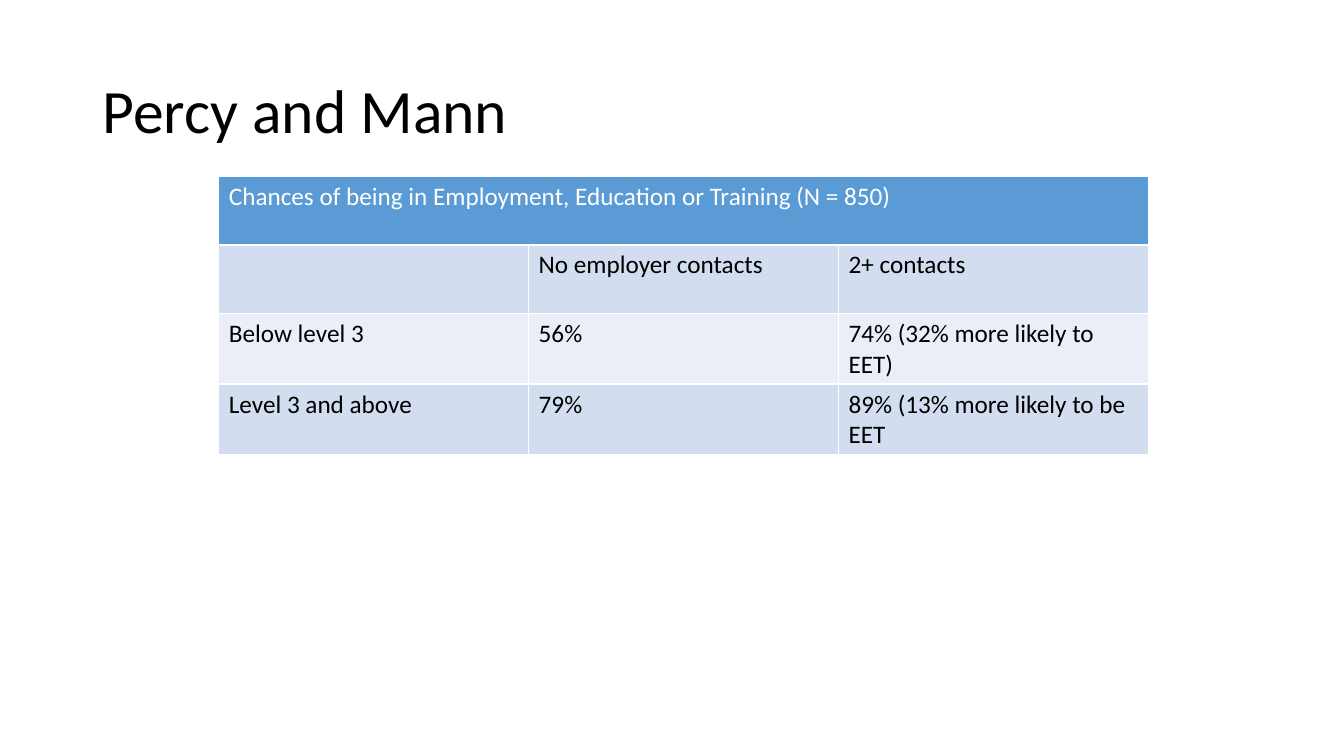
from dataclasses import dataclass

from lxml import etree
from pptx import Presentation
from pptx.dml.color import RGBColor
from pptx.enum import text
from pptx.oxml import ns
from pptx.util import Inches, Pt


@dataclass(frozen=True)
class Theme:
    font: str = "Calibri"
    title_size: int = 44
    table_size: int = 18
    dark: str = "000000"
    light: str = "FFFFFF"
    header: str = "5B9BD5"
    bands: tuple = ("D2DEEF", "EAEFF7")
    border_width: int = 1


THEME = Theme()
HEADING = "Chances of being in Employment, Education or Training (N = 850)"
ROWS = [
    (HEADING, "", ""),
    ("", "No employer contacts", "2+ contacts"),
    ("Below level 3", "56%", "74% (32% more likely to EET)"),
    ("Level 3 and above", "79%", "89% (13% more likely to be EET"),
]


def style_font(paragraph, size, color):
    paragraph.font.name = THEME.font
    paragraph.font.size = Pt(size)
    paragraph.font.bold = False
    paragraph.font.color.rgb = RGBColor.from_string(color)


def add_title(slide, wording):
    frame = slide.shapes.add_textbox(
        Inches(0.92), Inches(0.4), Inches(11.5), Inches(1.45)).text_frame
    frame.word_wrap = True
    frame.vertical_anchor = text.MSO_ANCHOR.MIDDLE
    title = frame.paragraphs[0]
    title.text = wording
    title.line_spacing = 0.9
    style_font(title, THEME.title_size, THEME.dark)


def add_borders(cell):
    """Draw all four sides; lines must precede the fill in the cell properties."""
    properties = cell._tc.get_or_add_tcPr()
    for position, side in enumerate(("lnL", "lnR", "lnT", "lnB")):
        line = etree.Element(ns.qn(f"a:{side}"), w=str(Pt(THEME.border_width)))
        fill = etree.SubElement(line, ns.qn("a:solidFill"))
        etree.SubElement(fill, ns.qn("a:srgbClr"), val=THEME.light)
        properties.insert(position, line)


def style_cell(cell, wording, fill, color):
    cell.text = wording
    style_font(cell.text_frame.paragraphs[0], THEME.table_size, color)
    cell.fill.solid()
    cell.fill.fore_color.rgb = RGBColor.from_string(fill)
    add_borders(cell)


def add_chances_table(slide, rows):
    row_count, column_count = len(rows), len(rows[0])
    table = slide.shapes.add_table(
        row_count, column_count, Inches(2.17), Inches(1.75),
        Inches(9.22), Inches(0.68 * row_count)).table
    table.first_row = table.horz_banding = False
    for row_index, row in enumerate(rows):
        if row_index == 0:
            fill, color = THEME.header, THEME.light
        else:
            fill, color = THEME.bands[(row_index - 1) % 2], THEME.dark
        for column_index, wording in enumerate(row):
            style_cell(table.cell(row_index, column_index), wording, fill, color)
    table.cell(0, 0).merge(table.cell(0, column_count - 1))


def main():
    deck = Presentation()
    deck.slide_width, deck.slide_height = Inches(13.33), Inches(7.5)
    slide = deck.slides.add_slide(deck.slide_layouts[6])
    add_title(slide, "Percy and Mann")
    add_chances_table(slide, ROWS)
    deck.save("out.pptx")


if __name__ == "__main__":
    main()
